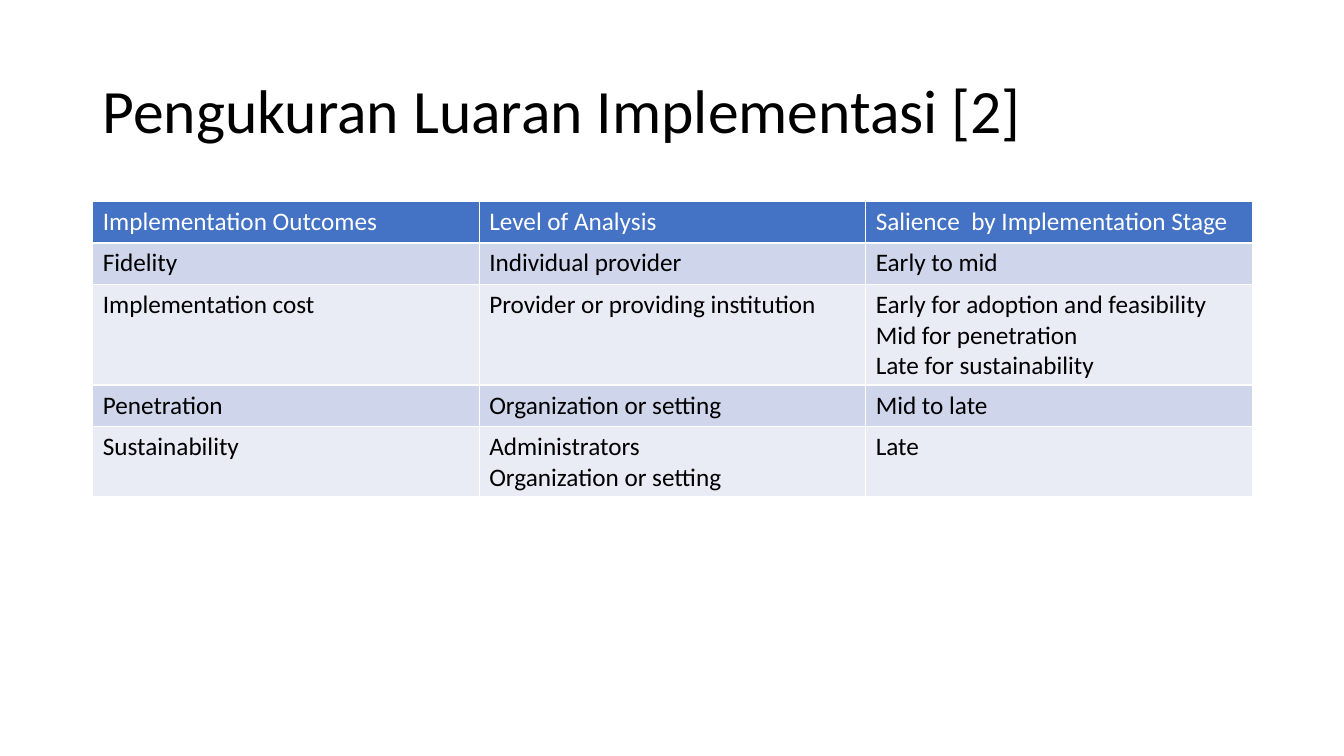
from pptx import Presentation
from pptx.dml.color import RGBColor
from pptx.enum.text import MSO_ANCHOR
from pptx.util import Inches, Pt

MIDDLE = MSO_ANCHOR.MIDDLE
BLACK = RGBColor(0x00, 0x00, 0x00)
WHITE = RGBColor(0xFF, 0xFF, 0xFF)
HEADER_BLUE = RGBColor(0x44, 0x72, 0xC4)
BAND_DARK = RGBColor(0xCF, 0xD5, 0xEA)
BAND_LIGHT = RGBColor(0xE9, 0xEB, 0xF5)

LEFT, WIDTH = 0.92, 11.5
ROW_HEIGHT = 0.41

OUTCOMES = [
    ["Implementation Outcomes", "Level of Analysis", "Salience  by Implementation Stage"],
    ["Fidelity", "Individual provider", "Early to mid"],
    [
        "Implementation cost",
        "Provider or providing institution",
        "Early for adoption and feasibility\nMid for penetration\nLate for sustainability",
    ],
    ["Penetration", "Organization or setting", "Mid to late"],
    ["Sustainability", "Administrators\nOrganization or setting", "Late"],
]


def write_text(frame, text, size=18, color=BLACK, line_spacing=None):
    frame.word_wrap = True
    frame.text = text
    for paragraph in frame.paragraphs:
        paragraph.line_spacing = line_spacing
        for run in paragraph.runs:
            run.font.name = "Calibri"
            run.font.size = Pt(size)
            run.font.bold = False
            run.font.color.rgb = color


def add_title(slide, text):
    title = slide.shapes.add_textbox(Inches(LEFT), Inches(0.4), Inches(WIDTH), Inches(1.45))
    title.text_frame.vertical_anchor = MIDDLE
    write_text(title.text_frame, text, size=44, line_spacing=0.9)


def row_fill(row_index):
    if row_index == 0:
        return HEADER_BLUE
    return BAND_DARK if row_index % 2 else BAND_LIGHT


def add_outcome_table(slide, rows):
    height = Inches(2.92)
    table_frame = slide.shapes.add_table(
        len(rows), len(rows[0]), Inches(LEFT), Inches(2), Inches(WIDTH), height
    )
    table = table_frame.table
    for row_index, entries in enumerate(rows):
        table.rows[row_index].height = Inches(ROW_HEIGHT)
        for column_index, entry in enumerate(entries):
            cell = table.cell(row_index, column_index)
            cell.fill.solid()
            cell.fill.fore_color.rgb = row_fill(row_index)
            write_text(cell.text_frame, entry, color=BLACK if row_index else WHITE)
    table_frame.height = height


def main():
    presentation = Presentation()
    presentation.slide_width = Inches(13.33)
    presentation.slide_height = Inches(7.5)
    slide = presentation.slides.add_slide(presentation.slide_layouts[6])
    add_title(slide, "Pengukuran Luaran Implementasi [2]")
    add_outcome_table(slide, OUTCOMES)
    presentation.save("out.pptx")


if __name__ == "__main__":
    main()
